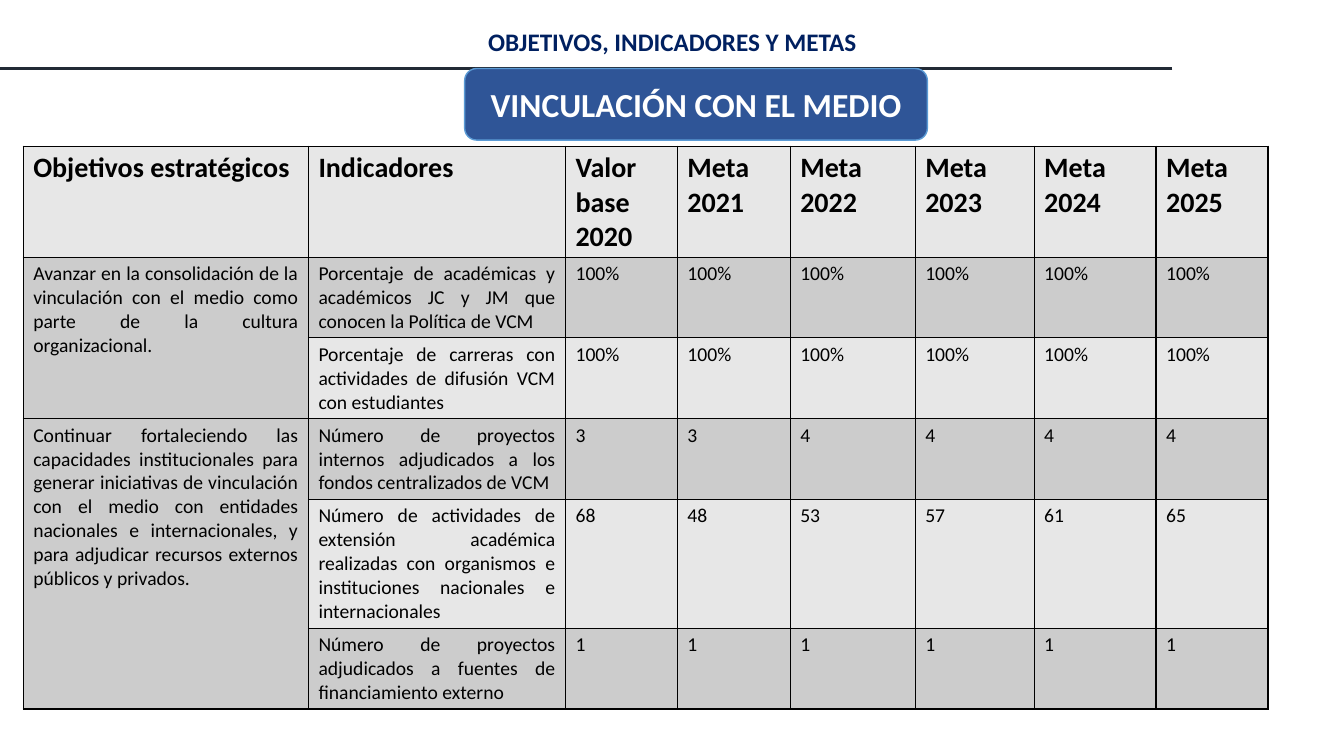
import dataclasses

import lxml.etree
import pptx
import pptx.dml.color
import pptx.enum.shapes
import pptx.enum.text
import pptx.oxml
import pptx.oxml.ns
import pptx.util

ALIGN = pptx.enum.text.PP_ALIGN
ANCHOR = pptx.enum.text.MSO_ANCHOR
SHAPE = pptx.enum.shapes.MSO_SHAPE
GRID_STEP = 0.1
COLUMN_WIDTHS = (28.3, 25.5, 11.1, 11.2, 12.4, 11.8, 12.1, 11.1)
ROW_HEIGHTS = (11, 8, 8, 8, 12.8, 8)
YEARS = range(2021, 2026)
HEADINGS = ("Objetivos estratégicos", "Indicadores", "Valor base 2020",
            *(f"Meta {year}" for year in YEARS))
FULL = ("100%",) * 6
OBJECTIVES = (
    ("Avanzar en la consolidación de la vinculación con el medio como parte de la "
     "cultura organizacional.",
     (("Porcentaje de académicas y académicos JC y JM que conocen la Política de VCM", FULL),
      ("Porcentaje de carreras con actividades de difusión VCM con estudiantes", FULL))),
    ("Continuar fortaleciendo las capacidades institucionales para generar iniciativas de "
     "vinculación con el medio con entidades nacionales e internacionales, y para adjudicar "
     "recursos externos públicos y privados.",
     (("Número de proyectos internos adjudicados a los fondos centralizados de VCM",
       (3, 3, 4, 4, 4, 4)),
      ("Número de actividades de extensión académica realizadas con organismos e "
       "instituciones nacionales e internacionales", (68, 48, 53, 57, 61, 65)),
      ("Número de proyectos adjudicados a fuentes de financiamiento externo", (1,) * 6))),
)


@dataclasses.dataclass(frozen=True)
class Theme:
    """Colours, font and type sizes of the slide."""
    font: str = "Calibri"
    white: str = "FFFFFF"
    black: str = "000000"
    navy: str = "002060"
    rule: str = "222A35"
    banner: str = "2F5597"
    banner_edge: str = "5B9BD5"
    light_band: str = "E7E7E7"
    dark_band: str = "CCCCCC"
    title_size: int = 18
    banner_size: int = 24
    heading_size: int = 20
    body_size: int = 14


THEME = Theme()


def grid(steps):
    """Turn grid steps into a length."""
    return pptx.util.Inches(steps * GRID_STEP)


def colour(value):
    """Turn a hex value into a colour."""
    return pptx.dml.color.RGBColor.from_string(value)


def paint(fill, value):
    """Fill an area with one solid colour."""
    fill.solid()
    fill.fore_color.rgb = colour(value)


def write(frame, text, size, ink, bold=False, align=ALIGN.LEFT):
    """Write one formatted paragraph into a text frame."""
    para = frame.paragraphs[0]
    para.alignment = align
    span = para.add_run()
    span.text = text
    formats = {"name": THEME.font, "size": pptx.util.Pt(size), "bold": bold}
    for name, value in formats.items():
        setattr(span.font, name, value)
    span.font.color.rgb = colour(ink)


def add_label(page, kind, place, fill, edge, text, size, ink):
    """Add a filled shape with a bold centred label."""
    box = page.shapes.add_shape(kind, *map(grid, place))
    box.shadow.inherit = False
    paint(box.fill, fill)
    if edge:
        box.line.color.rgb = colour(edge)
        box.line.width = pptx.util.Pt(1)
    else:
        box.line.fill.background()
    box.text_frame.word_wrap = True
    write(box.text_frame, text, size, ink, True, ALIGN.CENTER)
    return box


def add_rule(page, start, end, level):
    """Add a horizontal rule between two grid positions."""
    rule = page.shapes.add_connector(pptx.enum.shapes.MSO_CONNECTOR.STRAIGHT,
                                     *map(grid, (start, level, end, level)))
    rule.line.color.rgb = colour(THEME.rule)
    rule.line.width = pptx.util.Pt(2)
    lxml.etree.SubElement(rule._element.spPr, pptx.oxml.ns.qn("a:effectLst"))


def add_borders(cell):
    """Draw a thin border on every side of a cell."""
    properties = cell._tc.get_or_add_tcPr()
    for side in "LRTB":
        properties.append(pptx.oxml.parse_xml(
            f'<a:ln{side} {pptx.oxml.ns.nsdecls("a")} w="{pptx.util.Pt(1)}"><a:solidFill>'
            f'<a:srgbClr val="{THEME.black}"/></a:solidFill></a:ln{side}>'))


def fill_body(table):
    """Write the objectives with their indicators and values."""
    row = 1
    for objective, indicators in OBJECTIVES:
        last = row + len(indicators) - 1
        table.cell(row, 0).merge(table.cell(last, 0))
        write(table.cell(row, 0).text_frame, objective, THEME.body_size, THEME.black,
              align=ALIGN.JUSTIFY)
        for row, (indicator, values) in enumerate(indicators, row):
            for column, text in enumerate((indicator, *values), 1):
                write(table.cell(row, column).text_frame, str(text), THEME.body_size,
                      THEME.black, align=ALIGN.JUSTIFY if column == 1 else ALIGN.LEFT)
        row += 1


def add_goals(page, left, top):
    """Add the table of objectives, indicators and goals."""
    table = page.shapes.add_table(
        len(ROW_HEIGHTS), len(COLUMN_WIDTHS), grid(left), grid(top),
        grid(sum(COLUMN_WIDTHS)), grid(sum(ROW_HEIGHTS))).table
    table.horz_banding = False
    for column, width in zip(table.columns, COLUMN_WIDTHS):
        column.width = grid(width)
    for row, height in zip(table.rows, ROW_HEIGHTS):
        row.height = grid(height)
    for row_number, row in enumerate(table.rows):
        for column_number, cell in enumerate(row.cells):
            dark = row_number % 2 or (row_number and column_number == 0)
            add_borders(cell)
            paint(cell.fill, THEME.dark_band if dark else THEME.light_band)
    for column, heading in enumerate(HEADINGS):
        write(table.cell(0, column).text_frame, heading, THEME.heading_size,
              THEME.black, True)
    fill_body(table)


def main():
    """Build the slide and save the deck."""
    deck = pptx.Presentation()
    deck.slide_width, deck.slide_height = grid(133.33), grid(75)
    page = deck.slides.add_slide(deck.slide_layouts[6])
    add_rule(page, 116.3, -0.2, 6.8)
    title = add_label(page, SHAPE.RECTANGLE, (25.9, 2.1, 81.6, 4), THEME.white, None,
                      "OBJETIVOS, INDICADORES Y METAS", THEME.title_size, THEME.navy)
    title.text_frame.vertical_anchor = ANCHOR.TOP
    title.text_frame.auto_size = pptx.enum.text.MSO_AUTO_SIZE.SHAPE_TO_FIT_TEXT
    banner = add_label(page, SHAPE.ROUNDED_RECTANGLE, (46.1, 6.8, 45.9, 7.1),
                       THEME.banner, THEME.banner_edge, "VINCULACIÓN CON EL MEDIO",
                       THEME.banner_size, THEME.white)
    banner.text_frame.vertical_anchor = ANCHOR.MIDDLE
    add_goals(page, 2.3, 14.5)
    deck.save("out.pptx")


if __name__ == "__main__":
    main()
